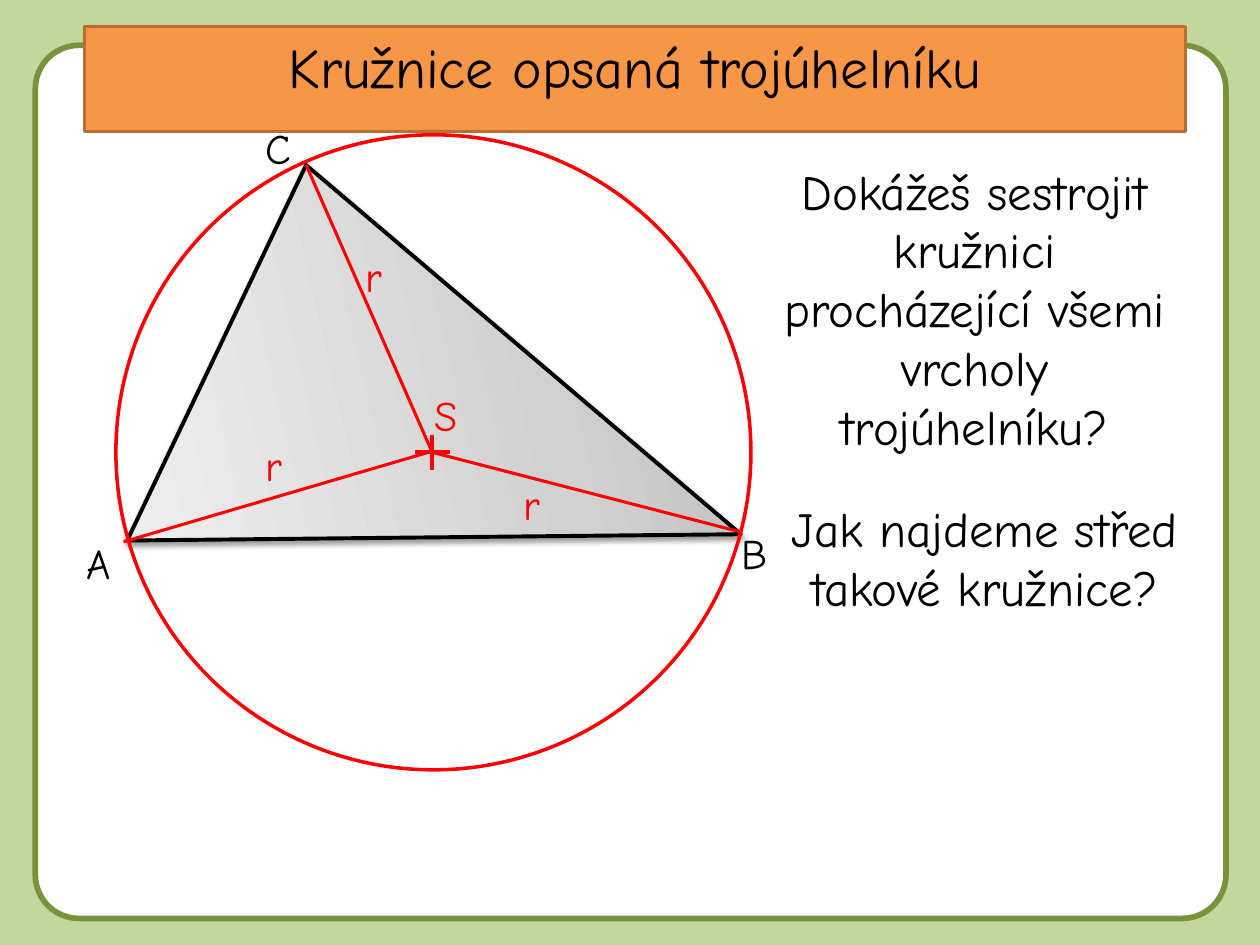
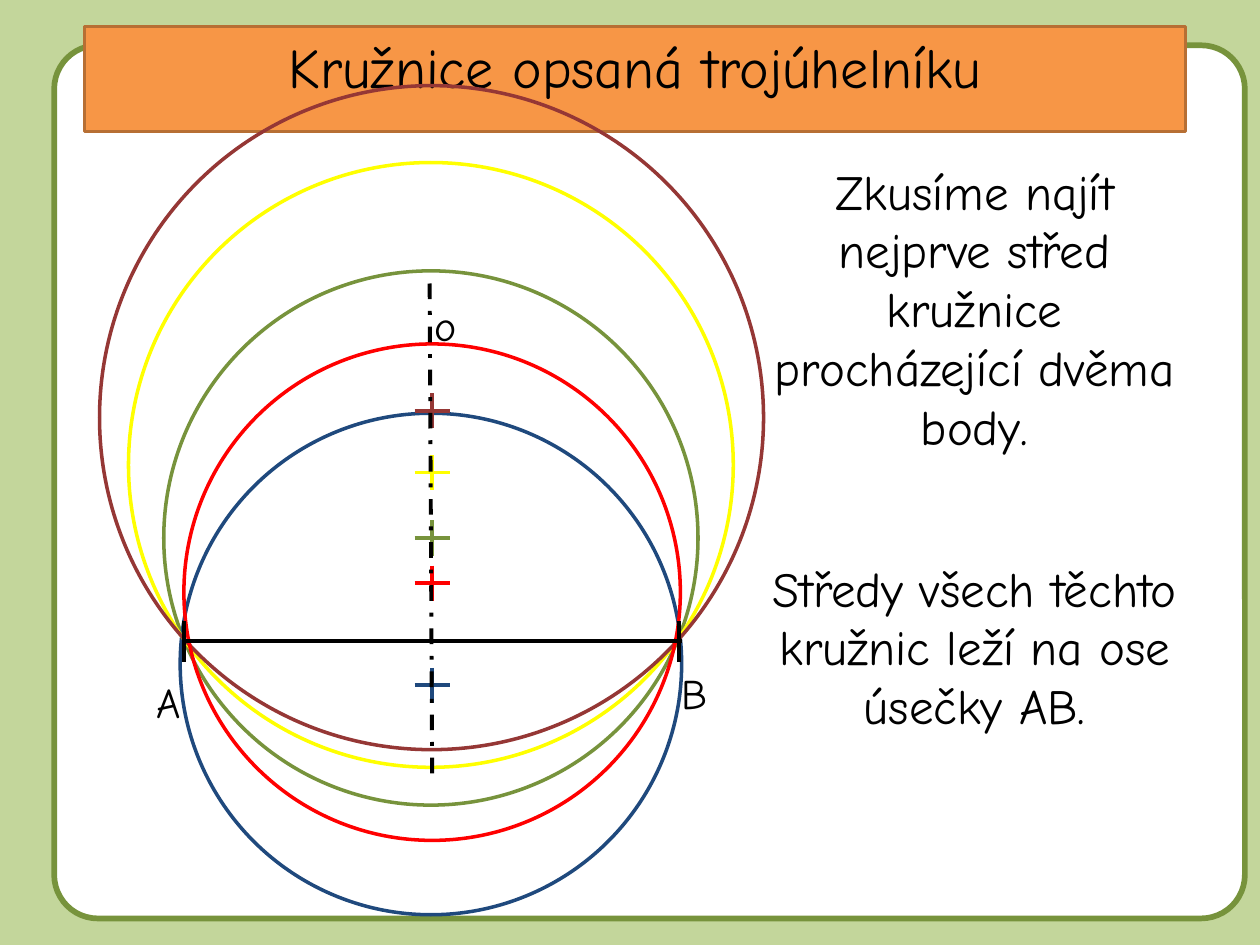
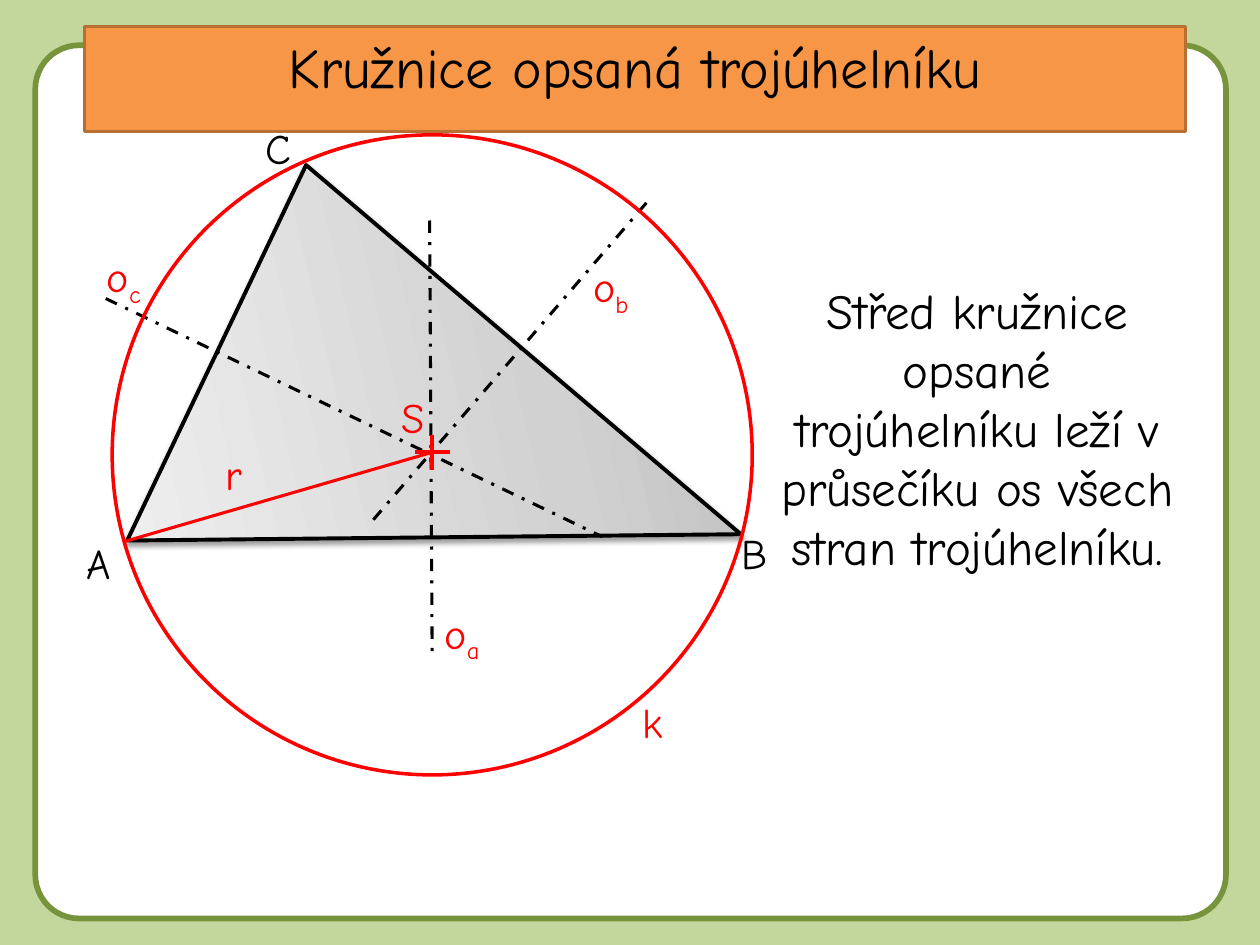
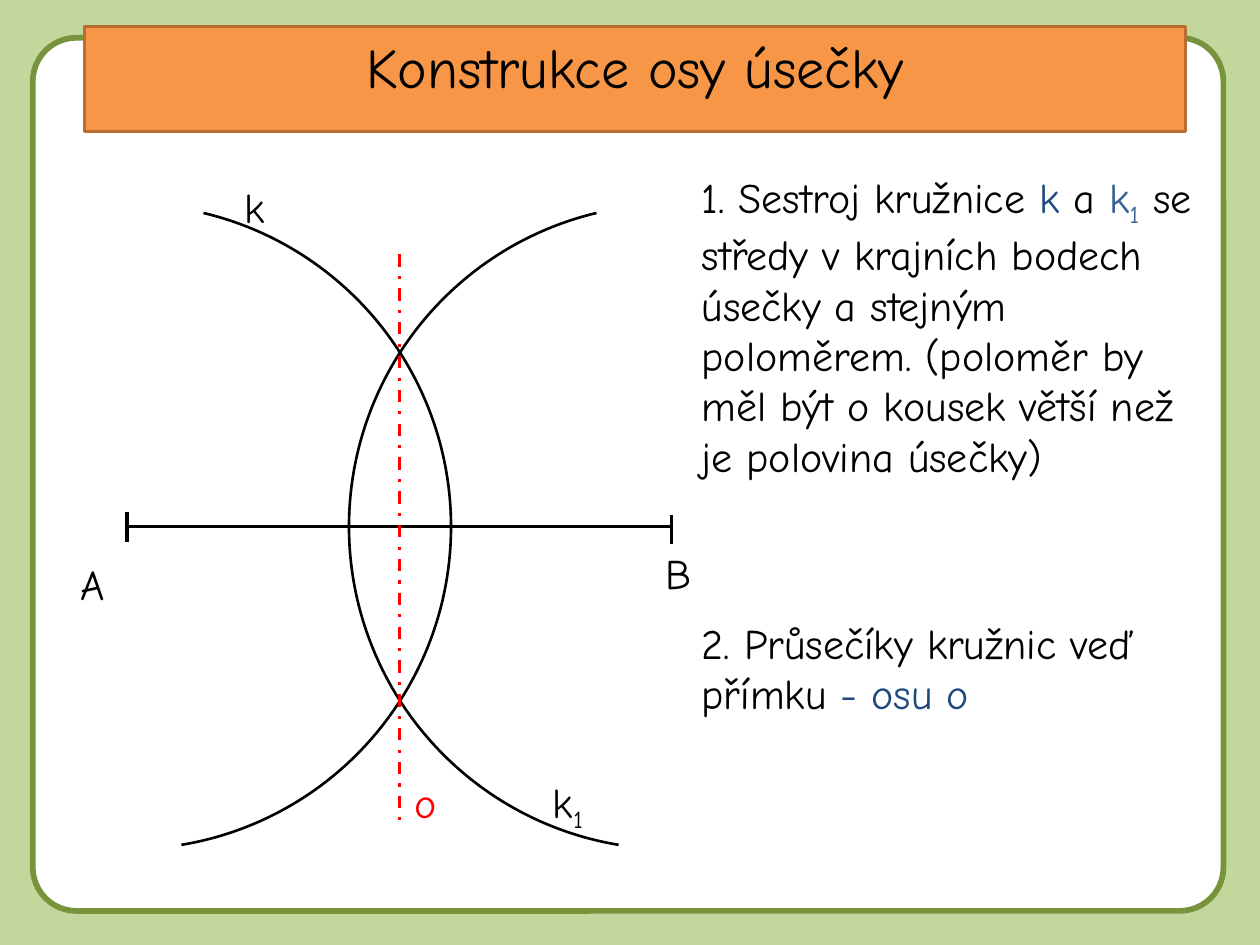
"""Build four geometry slides about the circumscribed circle and the segment bisector."""
import pptx
import pptx.util
import pptx.dml.color
import pptx.enum.dml
import pptx.enum.shapes
import pptx.enum.text
import pptx.oxml
import pptx.oxml.ns

PX = 9144
FONT = "Comic Neue"
BLACK, WHITE, RED, GREEN = "000000", "FFFFFF", "FF0000", "77933C"
NAVY, BLUE, YELLOW, BROWN = "1F497D", "376092", "FFFF00", "953735"
PAGE, BAND, BAND_EDGE = "C3D69B", "F79646", "B76F34"
rgb = pptx.dml.color.RGBColor.from_string
Pt = pptx.util.Pt
MSO = pptx.enum.shapes.MSO_SHAPE
CENTER = pptx.enum.text.PP_ALIGN.CENTER
LEFT = pptx.enum.text.PP_ALIGN.LEFT
NS = pptx.oxml.ns.nsdecls("a")


def add_line(s, x1, y1, x2, y2, color, width, dashed=False):
    """Draw a straight line without a shadow."""
    ln = s.shapes.add_connector(
        pptx.enum.shapes.MSO_CONNECTOR.STRAIGHT, x1 * PX, y1 * PX, x2 * PX, y2 * PX)
    ln.line.color.rgb = rgb(color)
    ln.line.width = Pt(width)
    if dashed:
        ln.line.dash_style = pptx.enum.dml.MSO_LINE.DASH_DOT
    ln.element.spPr.append(pptx.oxml.parse_xml(f"<a:effectLst {NS}/>"))


def write(sp, runs, size, align):
    """Fill a shape with runs of (text, colour) or (text, colour, baseline)."""
    tf = sp.text_frame
    tf.word_wrap = True
    tf.auto_size = pptx.enum.text.MSO_AUTO_SIZE.SHAPE_TO_FIT_TEXT
    tf.vertical_anchor = pptx.enum.text.MSO_ANCHOR.TOP
    p = tf.paragraphs[0]
    p.alignment = align
    for text, color, *baseline in runs:
        r = p.add_run()
        r.text = text
        r.font.name = FONT
        r.font.size = Pt(size)
        r.font.color.rgb = rgb(color)
        if baseline:
            r._r.get_or_add_rPr().set("baseline", str(baseline[0] * 1000))


prs = pptx.Presentation()
prs.slide_width, prs.slide_height = 1000 * PX, 750 * PX
bg = prs.slide_master.background.fill
bg.solid()
bg.fore_color.rgb = rgb(PAGE)

CIRCLE_TITLE = "Kružnice opsaná trojúhelníku"
slides = []
for heading, left, top in [
    (CIRCLE_TITLE, 28, 36),
    (CIRCLE_TITLE, 43, 36),
    (CIRCLE_TITLE, 28, 36),
    ("Konstrukce osy úsečky", 26, 30),
]:
    s = prs.slides.add_slide(prs.slide_layouts[5])
    slides.append(s)
    panel = s.shapes.add_shape(MSO.ROUNDED_RECTANGLE, left * PX, top * PX, 945 * PX, 693 * PX)
    panel.adjustments[0] = 0.05
    panel.shadow.inherit = False
    title = s.shapes.title
    title.left, title.top, title.width, title.height = 67 * PX, 21 * PX, 874 * PX, 64 * PX
    title.element.addprevious(panel.element)
    write(title, [(heading, BLACK)], 32, CENTER)
    for sp, fill, edge, width in [(panel, WHITE, GREEN, 3.25), (title, BAND, BAND_EDGE, 2)]:
        sp.fill.solid()
        sp.fill.fore_color.rgb = rgb(fill)
        sp.line.color.rgb = rgb(edge)
        sp.line.width = Pt(width)
question, chords, bisectors, construction = slides

for s in (question, bisectors):
    builder = s.shapes.build_freeform(101, 429, PX)
    builder.add_line_segments([(588, 424), (243, 131)])
    tri = builder.convert_to_shape()
    tri.line.color.rgb = rgb(BLACK)
    tri.line.width = Pt(2.25)
    stops = "".join(
        f'<a:gs pos="{pos * 1000}"><a:srgbClr val="{color}"/></a:gs>'
        for pos, color in [(0, "BDBDBD"), (35, "D1D1D1"), (100, "EEEEEE")])
    tri.element.spPr.insert(2, pptx.oxml.parse_xml(
        f'<a:gradFill {NS}><a:gsLst>{stops}</a:gsLst>'
        f'<a:lin ang="{167 * 60000}" scaled="0"/></a:gradFill>'))
    tri.element.spPr.append(pptx.oxml.parse_xml(
        f'<a:effectLst {NS}><a:outerShdw blurRad="40000" dist="20000" dir="5400000" '
        f'rotWithShape="0"><a:srgbClr val="{BLACK}"><a:alpha val="38000"/></a:srgbClr>'
        f'</a:outerShdw></a:effectLst>'))

for x1, y1, x2, y2 in [(341, 175, 343, 522), (84, 237, 478, 426), (513, 161, 295, 414)]:
    add_line(bisectors, x1, y1, x2, y2, BLACK, 1.75, True)

for s, x, y, d, color in [
    (question, 92, 107, 504, RED),
    (chords, 130, 215, 424, GREEN),
    (chords, 143, 328, 398, NAVY),
    (chords, 102, 129, 480, YELLOW),
    (chords, 79, 68, 527, BROWN),
    (chords, 146, 273, 394, RED),
    (bisectors, 89, 107, 508, RED),
]:
    sp = s.shapes.add_shape(MSO.OVAL, x * PX, y * PX, d * PX, d * PX)
    sp.fill.background()
    sp.line.color.rgb = rgb(color)
    sp.line.width = Pt(2)
    sp.shadow.inherit = False

for x, start, end in [(-154, 283.45, 80.55), (277, 99.45, 256.55)]:
    arc = construction.shapes.add_shape(MSO.ARC, x * PX, 162 * PX, 512 * PX, 512 * PX)
    arc.adjustments[0] = start * 0.6
    arc.adjustments[1] = end * 0.6
    arc.fill.background()
    arc.line.color.rgb = rgb(BLACK)
    arc.line.width = Pt(1.5)
    arc.shadow.inherit = False

for s, cy, color in [
    (question, 359, RED),
    (bisectors, 359, RED),
    (chords, 326, BROWN),
    (chords, 375, YELLOW),
    (chords, 427, GREEN),
    (chords, 463, RED),
    (chords, 544, NAVY),
]:
    add_line(s, 329, cy, 357, cy, color, 2.25)
    add_line(s, 343, cy - 14, 343, cy + 14, color, 2.25)

for s, x1, y1, x2, y2, color, width, dashed in [
    (question, 98, 430, 340, 359, RED, 1.75, False),
    (question, 343, 359, 587, 422, RED, 1.75, False),
    (question, 343, 359, 243, 131, RED, 1.75, False),
    (chords, 147, 509, 541, 509, BLACK, 2.5, False),
    (chords, 539, 493, 539, 525, BLACK, 2.5, False),
    (chords, 146, 493, 146, 525, BLACK, 2.5, False),
    (chords, 341, 225, 343, 619, BLACK, 2.25, True),
    (bisectors, 98, 430, 343, 359, RED, 1.75, False),
    (construction, 533, 409, 533, 432, BLACK, 2, False),
    (construction, 101, 418, 534, 418, BLACK, 2, False),
    (construction, 101, 406, 101, 430, BLACK, 2, False),
    (construction, 317, 202, 317, 651, RED, 1.75, True),
]:
    add_line(s, x1, y1, x2, y2, color, width, dashed)

labels = [
    (question, 335, 304, [("S", RED)]),
    (question, 201, 344, [("r", RED)]),
    (question, 406, 375, [("r", RED)]),
    (question, 280, 194, [("r", RED)]),
    (chords, 114, 532, [("A", BLACK)]),
    (chords, 531, 525, [("B", BLACK)]),
    (chords, 335, 233, [("o", BLACK)]),
    (bisectors, 461, 202, [("o", RED), ("b", RED, -25)]),
    (bisectors, 75, 194, [("o", RED), ("c", RED, -25)]),
    (bisectors, 343, 477, [("o", RED), ("a", RED, -25)]),
    (bisectors, 309, 306, [("S", RED)]),
    (bisectors, 169, 351, [("r", RED)]),
    (bisectors, 500, 548, [("k", RED)]),
    (construction, 54, 438, [("A", BLACK)]),
    (construction, 518, 430, [("B", BLACK)]),
    (construction, 184, 139, [("k", BLACK)]),
    (construction, 429, 611, [("k", BLACK), ("1", BLACK, -25)]),
    (construction, 319, 611, [("o", RED)]),
]
for s in (question, bisectors):
    for name, x, y in [("A", 59, 422), ("C", 201, 92), ("B", 579, 414)]:
        labels.append((s, x, y, [(name, BLACK)]))
for s, x, y, runs in labels:
    write(s.shapes.add_textbox(x * PX, y * PX, 55 * PX, 50 * PX), runs, 24, LEFT)

for s, x, y, w, h, size, align, runs in [
    (question, 602, 123, 343, 246, 28, CENTER,
     [("Dokážeš sestrojit kružnici procházející všemi vrcholy trojúhelníku?", BLACK)]),
    (question, 610, 391, 343, 151, 28, CENTER,
     [("Jak najdeme střed takové kružnice?", BLACK)]),
    (chords, 602, 123, 343, 246, 28, CENTER,
     [("Zkusíme najít nejprve střed kružnice procházející dvěma body.", BLACK)]),
    (chords, 602, 438, 343, 199, 28, CENTER,
     [("Středy všech těchto kružnic leží na ose úsečky AB.", BLACK)]),
    (bisectors, 610, 218, 331, 293, 28, CENTER,
     [("Střed kružnice opsané trojúhelníku leží v průsečíku os všech stran trojúhelníku.",
       BLACK)]),
    (construction, 547, 131, 425, 252, 24, LEFT,
     [("1. Sestroj kružnice ", BLACK), ("k", NAVY), (" a ", BLACK), ("k", BLUE),
      ("1", BLUE, -25),
      (" se středy v krajních bodech úsečky a stejným poloměrem. "
       "(poloměr by měl být o kousek větší než je polovina úsečky)", BLACK)]),
    (construction, 547, 485, 425, 91, 24, LEFT,
     [("2. Průsečíky kružnic veď přímku ", BLACK), ("- osu o", NAVY)]),
]:
    write(s.shapes.add_textbox(x * PX, y * PX, w * PX, h * PX), runs, size, align)

prs.save("out.pptx")
